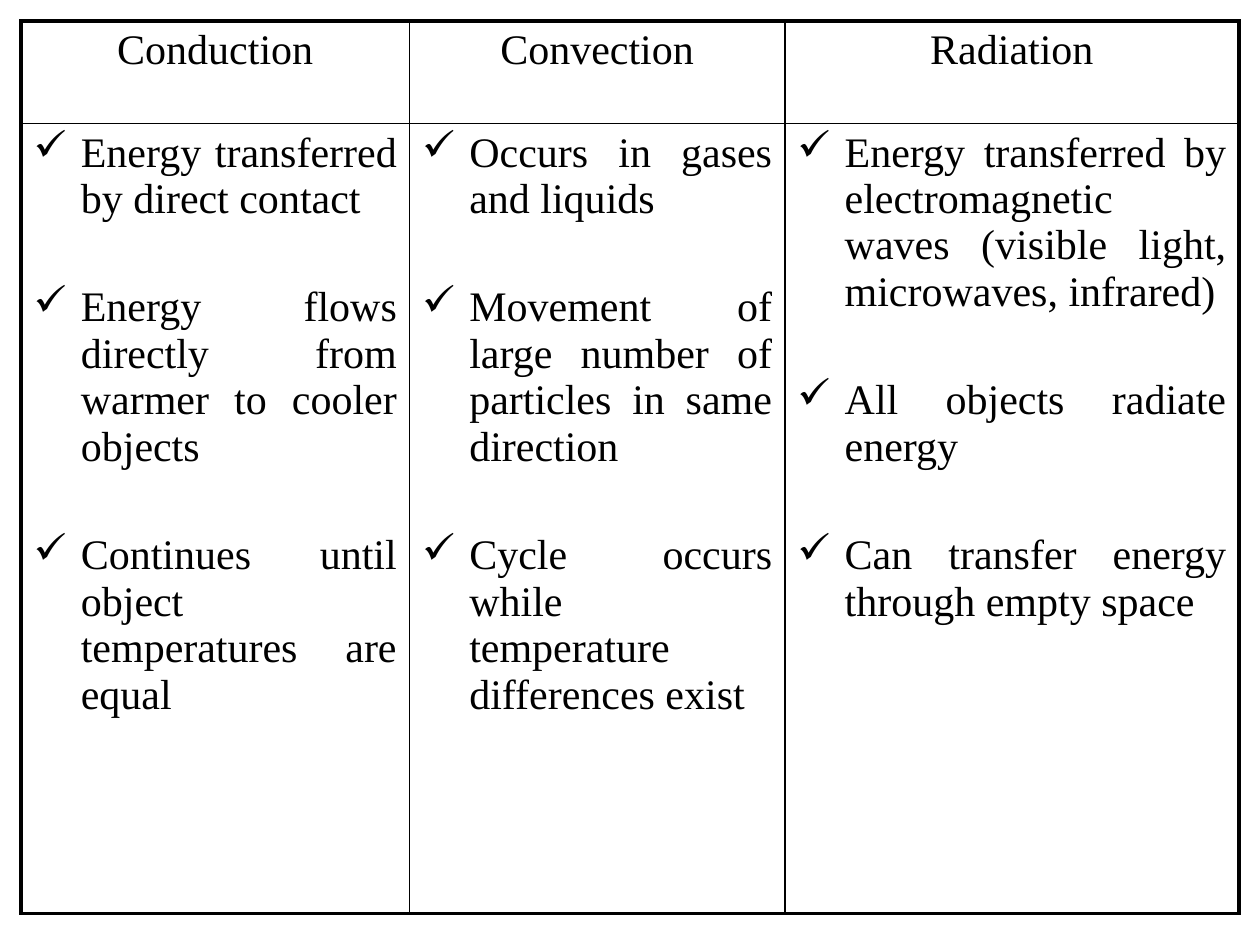
from pptx import Presentation
from pptx.dml.color import RGBColor
from pptx.enum.text import PP_ALIGN
from pptx.oxml import parse_xml
from pptx.oxml.ns import nsdecls
from pptx.util import Pt

# Content: heading and points of each column
COLS = [
    ("Conduction", [
        "Energy transferred by direct contact",
        "Energy flows directly from warmer to cooler objects",
        "Continues until object temperatures are equal",
    ]),
    ("Convection", [
        "Occurs in gases and liquids",
        "Movement of large number of particles in same direction",
        "Cycle occurs while temperature differences exist",
    ]),
    ("Radiation", [
        "Energy transferred by electromagnetic waves "
        "(visible light, microwaves, infrared)",
        "All objects radiate energy",
        "Can transfer energy through empty space",
    ]),
]
WIDTHS = [222, 214.5, 259.5]
HEIGHTS = [58.5, 451.5]
EDGE = 12

THEME = {
    "font": "Times New Roman", "size": 24, "ink": "000000",
    "outer": 2.25, "inner": 1, "indent": 27, "gap": 35.5,
}


def add_text(para, text, align):
    para.alignment = align
    run = para.add_run()
    run.text = text
    run.font.name = THEME["font"]
    run.font.size = Pt(THEME["size"])
    run.font.color.rgb = RGBColor.from_string(THEME["ink"])


def add_tick(para):
    props = para._p.get_or_add_pPr()
    props.set("marL", str(Pt(THEME["indent"])))
    props.set("indent", str(-Pt(THEME["indent"])))
    props.append(parse_xml(f'<a:buChar {nsdecls("a")} char="✓"/>'))


def add_lines(cell, row, col):
    # Thick lines around the table, thin ones inside
    outer = {
        "L": col == 0, "R": col == len(WIDTHS) - 1,
        "T": row == 0, "B": row == len(HEIGHTS) - 1,
    }
    props = cell._tc.get_or_add_tcPr()
    for i, (side, edge) in enumerate(outer.items()):
        width = Pt(THEME["outer" if edge else "inner"])
        props.insert(i, parse_xml(
            f'<a:ln{side} {nsdecls("a")} w="{width}"><a:solidFill>'
            f'<a:srgbClr val="{THEME["ink"]}"/></a:solidFill></a:ln{side}>'))


def main():
    prs = Presentation()
    prs.slide_width, prs.slide_height = Pt(720), Pt(540)
    slide = prs.slides.add_slide(prs.slide_layouts[6])

    # Table frame
    table = slide.shapes.add_table(
        len(HEIGHTS), len(WIDTHS), Pt(EDGE), Pt(EDGE),
        Pt(sum(WIDTHS)), Pt(sum(HEIGHTS))).table
    table.first_row = table.horz_banding = False
    for row, high in zip(table.rows, HEIGHTS):
        row.height = Pt(high)

    for c, (head, points) in enumerate(COLS):
        table.columns[c].width = Pt(WIDTHS[c])
        for r in range(len(HEIGHTS)):
            cell = table.cell(r, c)
            cell.fill.background()
            add_lines(cell, r, c)

        # Heading
        add_text(table.cell(0, c).text_frame.paragraphs[0], head,
                 PP_ALIGN.CENTER)

        # Ticked points
        frame = table.cell(1, c).text_frame
        for i, point in enumerate(points):
            para = frame.add_paragraph() if i else frame.paragraphs[0]
            add_tick(para)
            if i:
                para.space_before = Pt(THEME["gap"])
            add_text(para, point, PP_ALIGN.JUSTIFY)

    prs.save("out.pptx")


if __name__ == "__main__":
    main()
